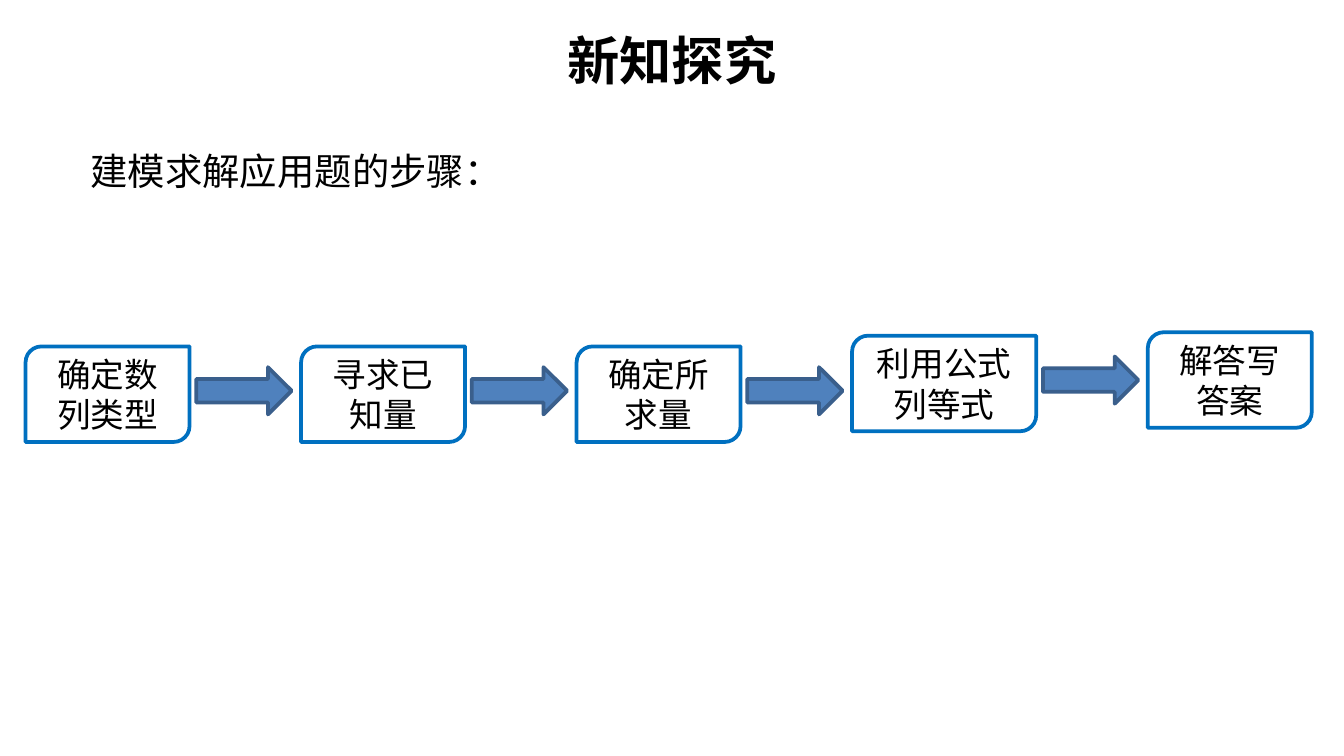
from pptx import Presentation
from pptx.dml.color import RGBColor as RGB
from pptx.enum.shapes import MSO_SHAPE as SHAPE
from pptx.enum.text import MSO_ANCHOR as ANCHOR, PP_ALIGN as ALIGN
from pptx.oxml.ns import qn
from pptx.util import Inches, Pt

COLORS = {"text": "000000", "box": "FFFFFF", "box_line": "0070C0",
          "arrow": "4F81BD", "arrow_line": "3A5F8C"}
CJK = "Noto Sans CJK SC"

prs = Presentation()
prs.slide_width = Inches(10)
prs.slide_height = prs.slide_width * 9 // 16
slide = prs.slides.add_slide(prs.slide_layouts[5])


def area(x, y, w, h):
    """Turn percentages of the slide's size into lengths."""
    pw, ph = prs.slide_width / 100, prs.slide_height / 100
    return int(x * pw), int(y * ph), int(w * pw), int(h * ph)


def write(sp, text, size=18, font="Calibri", bold=False, align=ALIGN.CENTER,
          anchor=ANCHOR.MIDDLE, wrap=True):
    tf = sp.text_frame
    tf.word_wrap = wrap
    tf.vertical_anchor = anchor
    p = tf.paragraphs[0]
    p.alignment = align
    r = p.add_run()
    r.text = text
    r.font.size, r.font.name, r.font.bold = Pt(size), font, bold
    r.font.color.rgb = RGB.from_string(COLORS["text"])
    ea = r.font._element.makeelement(qn("a:ea"), {"typeface": CJK})
    r.font._element.find(qn("a:latin")).addnext(ea)


title = slide.shapes.title
title.left, title.top, title.width, title.height = area(0, 2.4, 100, 11)
write(title, "新知探究", size=28, font=CJK, bold=True)

intro = slide.shapes.add_textbox(*area(5.74, 18.67, 32.8, 7.8))
write(intro, "建模求解应用题的步骤：", size=20, font="Arial",
      align=ALIGN.LEFT, anchor=ANCHOR.TOP, wrap=False)

# Each step: text, top and width in percent
steps = [("确定数列类型", 45.82, 12.2), ("寻求已知量", 45.82, 12.2),
         ("确定所求量", 45.82, 12.2), ("利用公式列等式", 44.4, 13.7),
         ("解答写答案", 43.95, 12.2)]
x, gap = 1.9, 8.3
for i, (text, top, width) in enumerate(steps):
    parts = [("box", SHAPE.ROUND_2_DIAG_RECTANGLE, (x, top, width, 12.65))]
    if i < len(steps) - 1:
        parts.append(("arrow", SHAPE.RIGHT_ARROW,
                      (x + width + 0.5, top + 2.75, 7.1, 6.25)))
    for kind, preset, place in parts:
        sp = slide.shapes.add_shape(preset, *area(*place))
        sp.shadow.inherit = False
        sp.fill.solid()
        sp.fill.fore_color.rgb = RGB.from_string(COLORS[kind])
        sp.line.color.rgb = RGB.from_string(COLORS[kind + "_line"])
        sp.line.width = Pt(2)
        if kind == "box":
            write(sp, text)
    x += width + gap

prs.save("out.pptx")
